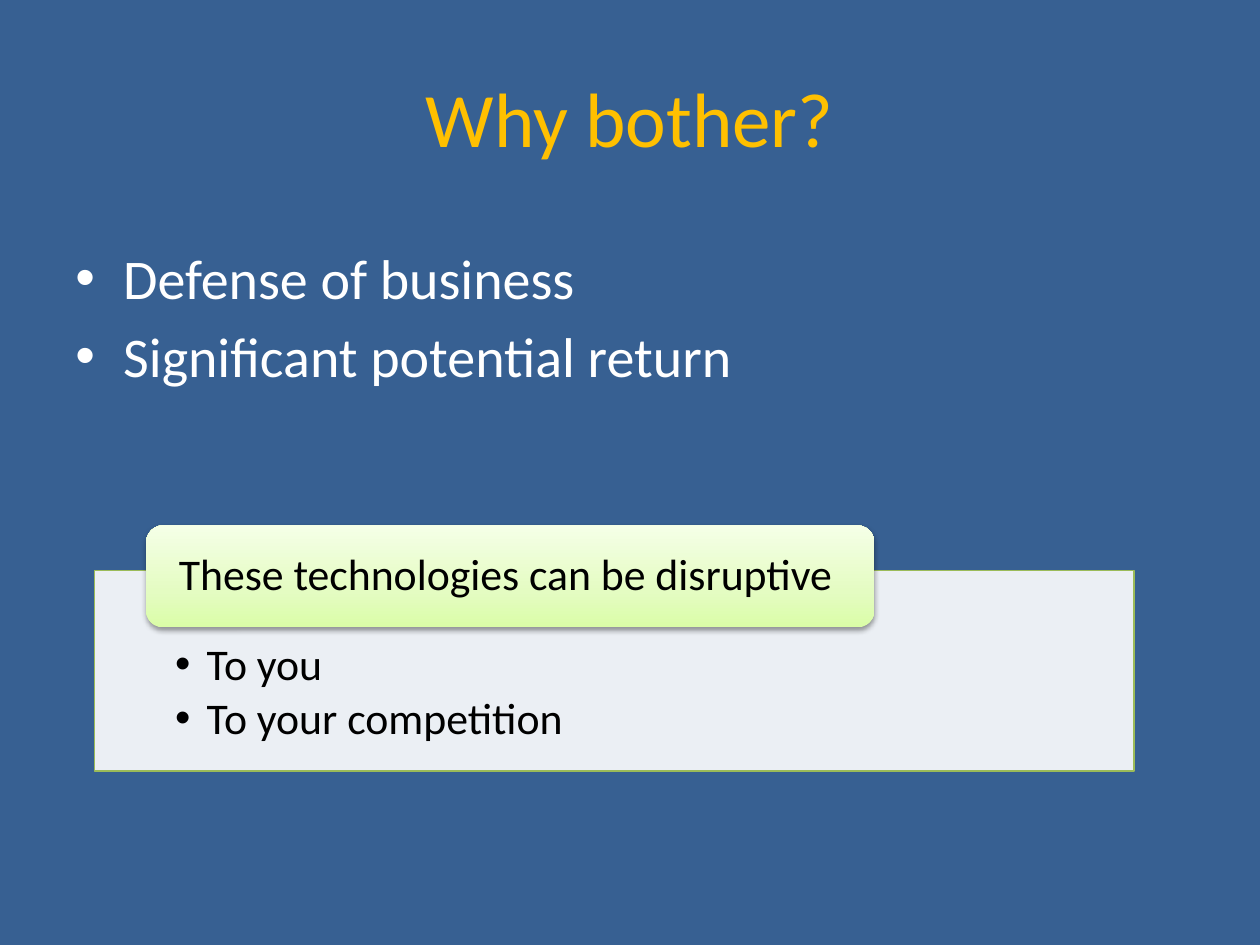
from lxml.etree import SubElement as Sub
from pptx import Presentation
from pptx.dml.color import RGBColor
from pptx.enum.shapes import MSO_SHAPE as Shape
from pptx.enum.text import MSO_ANCHOR as Anchor, PP_ALIGN as Align
from pptx.oxml.ns import qn
from pptx.util import Inches, Pt


def color(code):
    return RGBColor.from_string(code)


def assign(item, **values):
    for name, value in values.items():
        setattr(item, name, value)


def write(shape, lines, size, code, align=Align.LEFT, indent=None,
          frame=None, **spacing):
    text = shape.text_frame
    assign(text, word_wrap=True, **(frame or {}))
    text.text = "\n".join(lines)
    for para in text.paragraphs:
        assign(para, alignment=align, **spacing)
        assign(para.font, name="Calibri", size=Pt(size))
        para.font.color.rgb = color(code)
        for run in para.runs:
            assign(run.font, name="Calibri", size=Pt(size))
            run.font.color.rgb = color(code)
        if indent:
            props = para._p.get_or_add_pPr()
            props.set("marL", str(Inches(indent)))
            props.set("indent", str(-Inches(indent)))
            font = Sub(props, qn("a:buFont"), typeface="Arial")
            char = Sub(props, qn("a:buChar"), char="•")
            props.remove(font)
            props.remove(char)
            last = props.find(qn("a:defRPr"))
            for node in (font, char):
                if last is None:
                    props.append(node)
                else:
                    last.addprevious(node)


def insets(left, top, right, bottom):
    return dict(margin_left=Inches(left), margin_top=Inches(top),
                margin_right=Inches(right), margin_bottom=Inches(bottom))


def place(shapes, box, kind=None):
    spot = [Inches(side) for side in box]
    if kind is None:
        return shapes.add_textbox(*spot)
    shape = shapes.add_shape(kind, *spot)
    shape.shadow.inherit = False
    return shape


def add_title(shapes, box, title):
    write(place(shapes, box), [title], 44, "FFC000", Align.CENTER,
          frame=dict(vertical_anchor=Anchor.MIDDLE))


def add_points(shapes, box, points):
    write(place(shapes, box), points, 32, "FFFFFF", indent=0.38,
          space_before=Pt(6.4))


def add_panel(shapes, box, points):
    panel = place(shapes, box, Shape.RECTANGLE)
    panel.fill.solid()
    panel.fill.fore_color.rgb = color("FFFFFF")
    tint = panel._element.spPr.find(f"{qn('a:solidFill')}/{qn('a:srgbClr')}")
    Sub(tint, qn("a:alpha"), val="90000")
    panel.line.color.rgb = color("9BBB59")
    panel.line.width = Pt(0.75)
    write(panel, points, 25, "000000", indent=0.25,
          frame=dict(vertical_anchor=Anchor.TOP,
                     **insets(0.64, 0.57, 0.64, 0.19)),
          line_spacing=0.9, space_after=Pt(3.75))


def add_label(shapes, box, label):
    tab = place(shapes, box, Shape.ROUNDED_RECTANGLE)
    tab.line.fill.background()
    tab.fill.gradient()
    tab.fill.gradient_angle = 90
    props = tab._element.spPr
    stops = props.find(f"{qn('a:gradFill')}/{qn('a:gsLst')}")
    for stop in list(stops):
        stops.remove(stop)
    for part, code in ((0, "DAFDA7"), (35, "E4FCC2"), (100, "F5FFE7")):
        stop = Sub(stops, qn("a:gs"), pos=str(part * 1000))
        Sub(stop, qn("a:srgbClr"), val=code)
    glow = Sub(props.find(qn("a:effectLst")), qn("a:outerShdw"),
               blurRad=str(Pt(3.1)), dist=str(Pt(1.6)),
               dir="5400000", rotWithShape="0")
    shade = Sub(glow, qn("a:srgbClr"), val="000000")
    Sub(shade, qn("a:alpha"), val="38000")
    write(tab, [label], 25, "000000",
          frame=dict(vertical_anchor=Anchor.MIDDLE,
                     **insets(0.22, 0, 0.22, 0)),
          line_spacing=0.9)


def main():
    deck = Presentation()
    assign(deck, slide_width=Inches(10), slide_height=Inches(7.5))
    slide = deck.slides.add_slide(deck.slide_layouts[6])
    slide.background.fill.solid()
    slide.background.fill.fore_color.rgb = color("376092")
    shapes = slide.shapes
    add_title(shapes, (0.5, 0.3, 9, 1.25), "Why bother?")
    add_points(shapes, (0.5, 1.88, 9, 4.95),
               ["Defense of business", "Significant potential return"])
    add_panel(shapes, (0.75, 4.53, 8.25, 1.59),
              ["To you", "To your competition"])
    add_label(shapes, (1.16, 4.17, 5.78, 0.81),
              "These technologies can be disruptive")
    deck.save("out.pptx")


if __name__ == "__main__":
    main()
